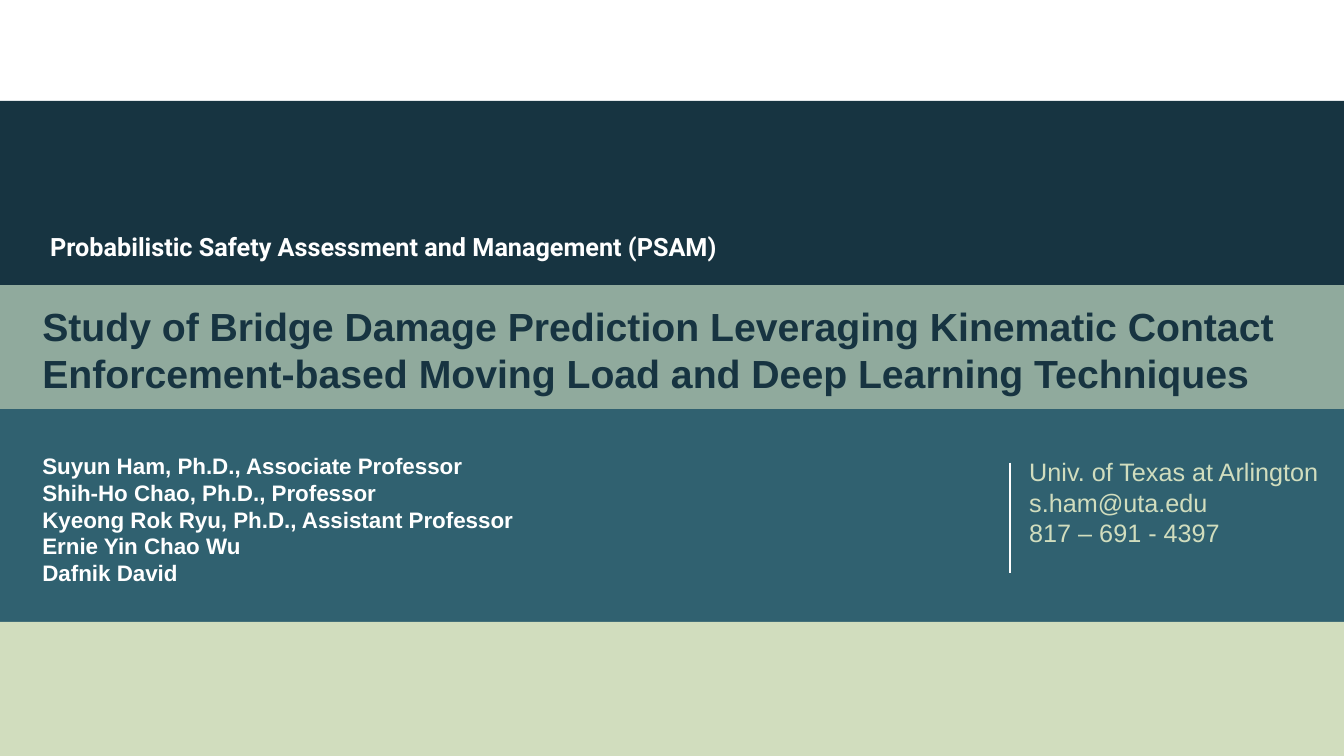
"""Build the title slide of a bridge damage talk."""
from lxml import etree
from pptx import Presentation
from pptx.dml.color import RGBColor
from pptx.enum.shapes import MSO_CONNECTOR, MSO_SHAPE
from pptx.enum.text import MSO_ANCHOR, MSO_AUTO_SIZE, PP_ALIGN
from pptx.oxml.ns import qn
from pptx.util import Inches, Pt

RECT = MSO_SHAPE.RECTANGLE
STRAIGHT = MSO_CONNECTOR.STRAIGHT
MIDDLE = MSO_ANCHOR.MIDDLE
FIXED = MSO_AUTO_SIZE.NONE
LEFT = PP_ALIGN.LEFT

NAVY = RGBColor(0x17, 0x34, 0x41)
SAGE = RGBColor(0x90, 0xAA, 0x9D)
TEAL = RGBColor(0x30, 0x61, 0x70)
LIME = RGBColor(0xD1, 0xDD, 0xBE)
WHITE = RGBColor(0xFF, 0xFF, 0xFF)

WIDTH, HEIGHT = 13.33, 7.5
BANDS = [(1, NAVY), (2.83, SAGE), (4.06, TEAL), (6.17, LIME)]
EVENT = ["Probabilistic Safety Assessment and Management (PSAM)"]
TITLE = [
    "Study of Bridge Damage Prediction Leveraging Kinematic Contact "
    "Enforcement-based Moving Load and Deep Learning Techniques"
]
AUTHORS = [
    "Suyun Ham, Ph.D., Associate Professor",
    "Shih-Ho Chao, Ph.D., Professor",
    "Kyeong Rok Ryu, Ph.D., Assistant Professor",
    "Ernie Yin Chao Wu",
    "Dafnik David",
]
CONTACT = ["Univ. of Texas at Arlington", "s.ham@uta.edu", "817 – 691 - 4397"]


def apply(target, values):
    for name, value in values.items():
        setattr(target, name, value)


def add_bands(slide):
    ends = [top for top, _ in BANDS[1:]] + [HEIGHT]
    for (top, color), end in zip(BANDS, ends):
        band = slide.shapes.add_shape(
            RECT, 0, Inches(top), Inches(WIDTH), Inches(end - top))
        band.shadow.inherit = False
        band.fill.solid()
        band.fill.fore_color.rgb = color
        band.line.fill.background()


def add_rule(slide, x, top, end):
    rule = slide.shapes.add_connector(
        STRAIGHT, Inches(x), Inches(top), Inches(x), Inches(end))
    rule.line.color.rgb = WHITE
    rule.line.width = Pt(1.5)
    etree.SubElement(rule.element.spPr, qn("a:effectLst"))


def place(shape, box):
    names = ("left", "top", "width", "height")
    apply(shape, dict(zip(names, map(Inches, box))))
    shape.element.getparent().append(shape.element)


def write(shape, lines, color, font):
    frame = shape.text_frame
    apply(frame, {"word_wrap": True, "auto_size": FIXED,
                  "vertical_anchor": MIDDLE})
    frame.text = "\n".join(lines)
    for para in frame.paragraphs:
        apply(para, {"alignment": LEFT, "space_before": Pt(0),
                     "space_after": Pt(0), "line_spacing": 1.0})
        for run in para.runs:
            apply(run.font, font)
            run.font.color.rgb = color


def add_text(slide, box, lines, color, font):
    text = slide.shapes.add_textbox(*map(Inches, box))
    write(text, lines, color, font)


def main():
    deck = Presentation()
    apply(deck, {"slide_width": Inches(WIDTH), "slide_height": Inches(HEIGHT)})
    slide = deck.slides.add_slide(deck.slide_layouts[0])
    title, body = slide.placeholders
    add_bands(slide)

    place(body, (0.32, 4.35, 9.15, 1.6))
    write(body, AUTHORS, WHITE,
          {"name": "Arial", "size": Pt(16), "bold": True})
    place(title, (0.32, 2.93, 12.7, 1.08))
    write(title, TITLE, NAVY,
          {"name": "Arial", "size": Pt(28), "bold": True})

    add_text(slide, (10.11, 4.48, 3.2, 1), CONTACT, LIME,
             {"name": "Arial", "size": Pt(18)})
    add_rule(slide, 10.02, 4.59, 5.68)
    add_text(slide, (0.4, 2.24, 7.47, 0.4), EVENT, WHITE,
             {"name": "Roboto", "size": Pt(18), "bold": True})
    deck.save("out.pptx")


if __name__ == "__main__":
    main()
